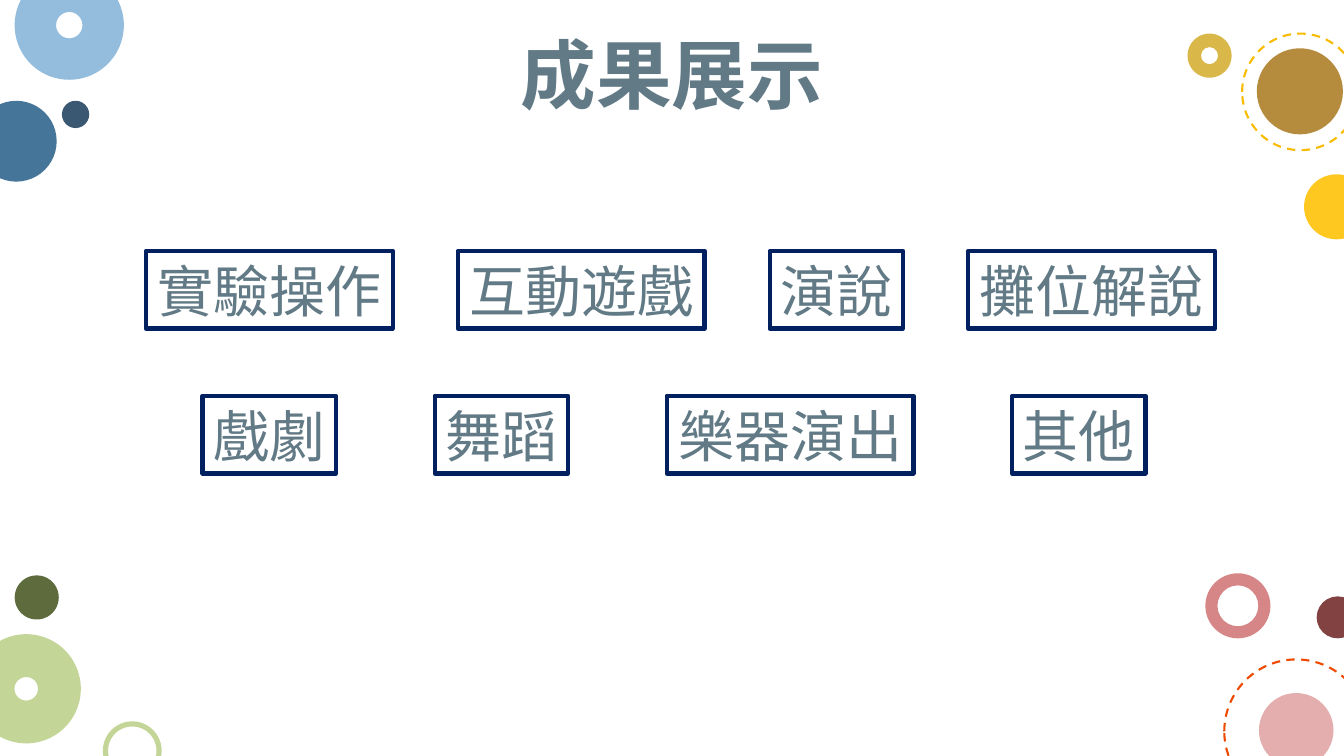
from lxml import etree
from pptx import Presentation
from pptx import util as u
from pptx.dml.color import RGBColor
from pptx.enum import dml, shapes, text
from pptx.oxml.ns import qn

PX = 9525
FONT = "Noto Sans CJK SC"
TEXT_COLOUR = "617A86"
NAVY = "002060"

CORNERS = [
    ((0, 0, 120, 180), [
        (-23, 96, 77, "2B618B", None),
        (14, -28, 104, "85B4D9", 0.379),
        (59, 96, 26, "1D405D", None),
    ], []),
    ((1120, 0, 160, 240), [
        (11, 32, 42, "D5AD2F", 0.306),
        (77, 46, 82, "AB7A22", None),
        (122, 166, 62, "FFC000", None),
    ], [(63, 32, 111, "F8BB00")]),
    ((0, 540, 160, 180), [
        (98, 147, 56, "BBD189", 0.088),
        (-27, 64, 104, "BBD189", 0.392),
        (14, 8, 42, "465621", None),
    ], []),
    ((1140, 540, 140, 180), [
        (8, 6, 62, "D07576", 0.186),
        (114, 28, 40, "712627", None),
        (59, 120, 71, "E0A3A3", None),
    ], [(26, 88, 137, "ED4A00")]),
]

LABEL_ROWS = [
    ((139, 239, 1019, 74), 62, ["實驗操作", "互動遊戲", "演說", "攤位解說"]),
    ((193, 377, 898, 74), 94, ["戲劇", "舞蹈", "樂器演出", "其他"]),
]


def px(length):
    return u.Emu(length * PX)


def colour(value):
    return RGBColor.from_string(value)


def add_plain_shape(slide, kind, box):
    shape = slide.shapes.add_shape(kind, *map(px, box))
    shape.shadow.inherit = False
    shape.fill.background()
    shape.line.fill.background()
    return shape


def set_outline(shape, value, width):
    shape.line.color.rgb = colour(value)
    shape.line.width = u.Pt(width)


def write_text(shape, wording, size, bold=False):
    frame = shape.text_frame
    frame.word_wrap = False
    frame.auto_size = text.MSO_AUTO_SIZE.NONE
    frame.vertical_anchor = text.MSO_ANCHOR.MIDDLE
    paragraph = frame.paragraphs[0]
    paragraph.alignment = text.PP_ALIGN.CENTER
    run = paragraph.add_run()
    run.text = wording
    run.font.name = FONT
    run.font.size = u.Pt(size)
    run.font.bold = bold
    run.font.color.rgb = colour(TEXT_COLOUR)
    east_asian = etree.SubElement(run.font._element, qn("a:ea"))
    east_asian.set("typeface", FONT)


def add_corner(slide, box, discs, rings):
    left, top = box[:2]
    for x, y, size, fill, thickness in discs:
        kind = shapes.MSO_SHAPE.DONUT if thickness else shapes.MSO_SHAPE.OVAL
        disc = add_plain_shape(slide, kind, (left + x, top + y, size, size))
        if thickness:
            disc.adjustments[0] = thickness
        disc.fill.solid()
        disc.fill.fore_color.rgb = colour(fill)
        colour_element = disc._element.spPr.find(qn("a:solidFill"))[0]
        etree.SubElement(colour_element, qn("a:alpha")).set("val", "87000")
    for x, y, size, line in rings:
        ring = add_plain_shape(slide, shapes.MSO_SHAPE.OVAL, (left + x, top + y, size, size))
        set_outline(ring, line, 1.5)
        ring.line.dash_style = dml.MSO_LINE.DASH


def add_title(slide, box):
    title = slide.shapes.title
    title.left, title.top, title.width, title.height = map(px, box)
    write_text(title, "成果展示", 54, bold=True)


def add_label_row(slide, box, gap, labels):
    left, top, _, height = box
    for wording in labels:
        width = 19 + 54 * len(wording)
        label = add_plain_shape(slide, shapes.MSO_SHAPE.RECTANGLE, (left, top, width, height))
        set_outline(label, NAVY, 3)
        write_text(label, wording, 40)
        left += width + gap


def main():
    presentation = Presentation()
    presentation.slide_width = px(1280)
    presentation.slide_height = px(720)
    slide = presentation.slides.add_slide(presentation.slide_layouts.get_by_name("Title Only"))
    for box, discs, rings in CORNERS:
        add_corner(slide, box, discs, rings)
    add_title(slide, (485, 21, 310, 97))
    for box, gap, labels in LABEL_ROWS:
        add_label_row(slide, box, gap, labels)
    presentation.save("out.pptx")


if __name__ == "__main__":
    main()
